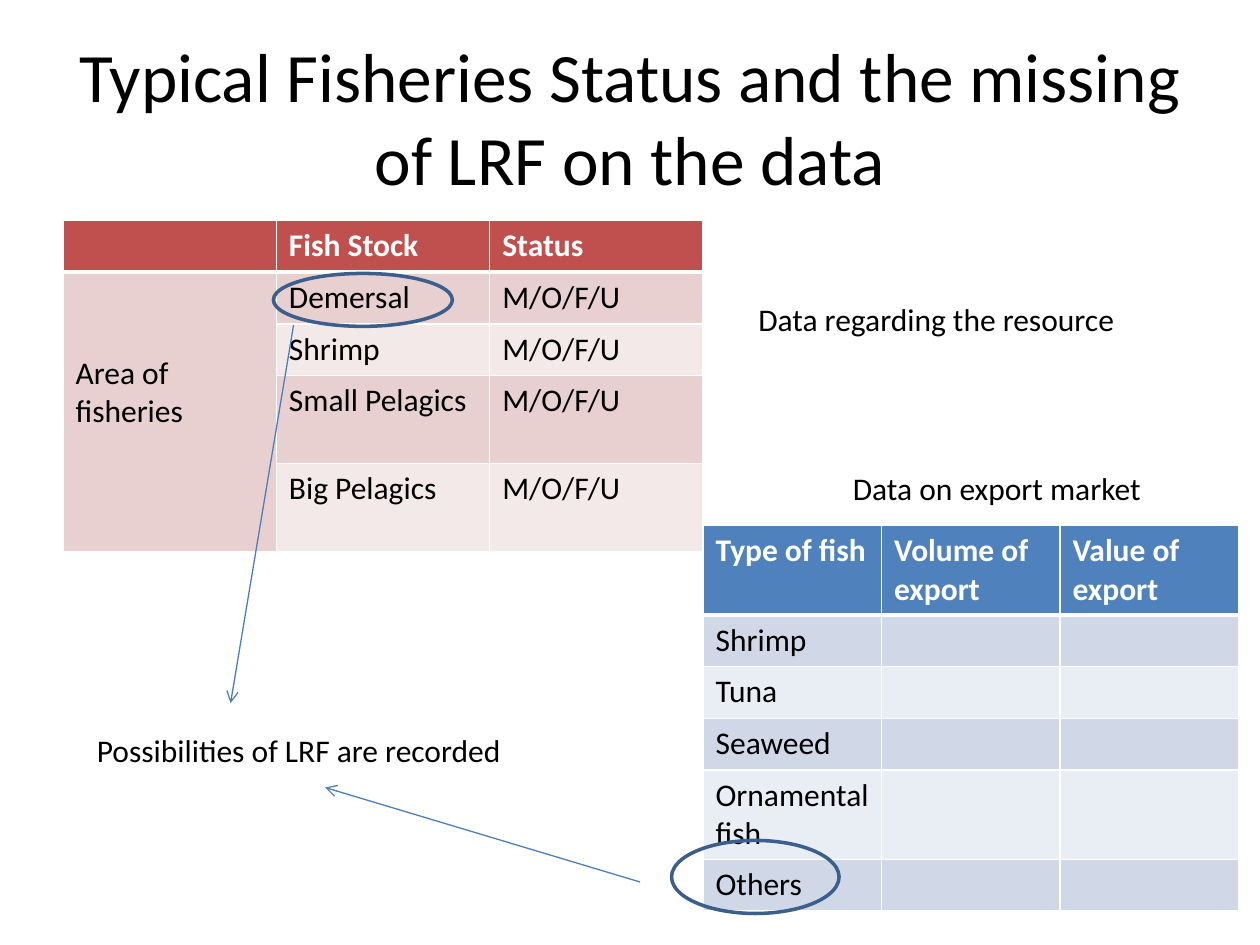
from dataclasses import dataclass

from lxml import etree
from pptx import Presentation
from pptx.dml.color import RGBColor
from pptx.enum import shapes, text
from pptx.oxml import ns
from pptx.util import Inches, Pt


@dataclass(frozen=True)
class Theme:
    """Colours, font and type sizes of the slide."""
    font: str = "Calibri"
    title_size: float = 39.6
    body_size: float = 18
    ink: str = "000000"
    paper: str = "FFFFFF"
    ring: str = "3A5F8C"
    arrow: str = "4B7EBC"
    stock: tuple[str, str, str] = ("C0504D", "E8D0D0", "F4E9E9")
    export: tuple[str, str, str] = ("4F81BD", "D0D8E8", "E9EDF4")


@dataclass(frozen=True)
class Grid:
    """A table with its header colour and two band colours."""
    left: float
    top: float
    width: float
    heights: tuple[float, ...]
    rows: tuple[tuple[str, ...], ...]
    colors: tuple[str, str, str]


@dataclass(frozen=True)
class Label:
    """A caption and its place."""
    words: str
    left: float
    top: float
    width: float


@dataclass(frozen=True)
class Ring:
    """An ellipse around a table entry."""
    left: float
    top: float
    width: float
    height: float


@dataclass(frozen=True)
class Arrow:
    """A line from one point to another, headed at its end."""
    start: tuple[float, float]
    end: tuple[float, float]


THEME = Theme()
STATUS = "M/O/F/U"
LINE, TALL = 0.41, 0.7

GRIDS = (
    Grid(0.5, 1.75, 5.08, (LINE, LINE, LINE, TALL, TALL), (
        ("", "Fish Stock", "Status"),
        ("Area of fisheries", "Demersal", STATUS),
        ("", "Shrimp", STATUS),
        ("", "Small Pelagics", STATUS),
        ("", "Big Pelagics", STATUS),
    ), THEME.stock),
    Grid(5.58, 4.17, 4.25, (TALL, LINE, LINE, LINE, TALL, LINE), (
        ("Type of fish", "Volume of export", "Value of export"),
        *((kind, "", "") for kind in
          ("Shrimp", "Tuna", "Seaweed", "Ornamental fish", "Others")),
    ), THEME.export),
)
RINGS = (Ring(2.17, 2.17, 1.42, 0.42), Ring(5.33, 6.67, 1.33, 0.58))
ARROWS = (Arrow((2.33, 2.58), (1.83, 5.58)), Arrow((5.08, 7), (2.58, 6.25)))
LABELS = (
    Label("Possibilities of LRF are recorded", 0.67, 5.75, 3.45),
    Label("Data regarding the resource", 5.92, 2.33, 3.06),
    Label("Data on export market", 6.67, 3.67, 2.51),
)


def rgb(color: str) -> RGBColor:
    """Turn a hex string into a colour."""
    return RGBColor.from_string(color)


def write(frame, words: str, size: float, color: str, bold: bool = False) -> None:
    """Set the text of a frame and format its runs."""
    frame.text = words
    for para in frame.paragraphs:
        para.font.size = Pt(size)
        for span in para.runs:
            span.font.name = THEME.font
            span.font.size = Pt(size)
            span.font.bold = bold
            span.font.color.rgb = rgb(color)


def add_border(cell, side: str, points: float) -> None:
    """Draw one side of a cell in the paper colour."""
    properties = cell._tc.get_or_add_tcPr()
    line = etree.SubElement(properties, ns.qn(f"a:ln{side}"), w=str(Pt(points)))
    fill = etree.SubElement(line, ns.qn("a:solidFill"))
    etree.SubElement(fill, ns.qn("a:srgbClr"), val=THEME.paper)


def add_grid(page, grid: Grid):
    """Add a banded table and return it."""
    columns = len(grid.rows[0])
    table = page.shapes.add_table(
        len(grid.rows), columns, Inches(grid.left), Inches(grid.top),
        Inches(grid.width), Inches(sum(grid.heights))).table
    header, *bands = grid.colors
    for column in table.columns:
        column.width = Inches(grid.width / columns)
    for index, (height, entries) in enumerate(zip(grid.heights, grid.rows)):
        table.rows[index].height = Inches(height)
        is_header = index == 0
        for position, words in enumerate(entries):
            cell = table.cell(index, position)
            for side in "LRTB":
                heavy = (index, side) in ((0, "B"), (1, "T"))
                add_border(cell, side, 3 if heavy else 1)
            cell.fill.solid()
            cell.fill.fore_color.rgb = rgb(header if is_header else bands[(index - 1) % 2])
            write(cell.text_frame, words, THEME.body_size,
                  THEME.paper if is_header else THEME.ink, is_header)
    return table


def add_ring(page, ring: Ring) -> None:
    """Add an unfilled ellipse."""
    shape = page.shapes.add_shape(
        shapes.MSO_SHAPE.OVAL, Inches(ring.left), Inches(ring.top),
        Inches(ring.width), Inches(ring.height))
    shape.shadow.inherit = False
    shape.fill.background()
    shape.line.color.rgb = rgb(THEME.ring)
    shape.line.width = Pt(2)


def add_arrow(page, arrow: Arrow) -> None:
    """Add a thin line with an open arrowhead."""
    line = page.shapes.add_connector(
        shapes.MSO_CONNECTOR.STRAIGHT, *map(Inches, arrow.start + arrow.end))
    line.line.color.rgb = rgb(THEME.arrow)
    line.line.width = Pt(0.75)
    properties = line._element.spPr
    etree.SubElement(properties.find(ns.qn("a:ln")), ns.qn("a:tailEnd"), type="arrow")
    etree.SubElement(properties, ns.qn("a:effectLst"))


def add_label(page, label: Label) -> None:
    """Add a one-line caption."""
    box = page.shapes.add_textbox(
        Inches(label.left), Inches(label.top), Inches(label.width), Inches(0.4))
    frame = box.text_frame
    write(frame, label.words, THEME.body_size, THEME.ink)
    frame.word_wrap = False
    frame.auto_size = text.MSO_AUTO_SIZE.SHAPE_TO_FIT_TEXT


def add_title(page, words: str) -> None:
    """Place and format the title."""
    title = page.shapes.title
    title.left, title.top, title.width, title.height = map(Inches, (0.5, 0.3, 9, 1.25))
    write(title.text_frame, words, THEME.title_size, THEME.ink)
    title.text_frame.auto_size = text.MSO_AUTO_SIZE.NONE
    title.text_frame.vertical_anchor = text.MSO_ANCHOR.MIDDLE
    title.text_frame.paragraphs[0].alignment = text.PP_ALIGN.CENTER


def main() -> None:
    """Build the slide and save it."""
    deck = Presentation()
    deck.slide_width, deck.slide_height = Inches(10), Inches(7.5)
    page = deck.slides.add_slide(deck.slide_layouts[5])
    add_title(page, "Typical Fisheries Status and the missing of LRF on the data")
    stock, _ = [add_grid(page, grid) for grid in GRIDS]
    area = stock.cell(1, 0)
    area.merge(stock.cell(4, 0))
    area.margin_top = Inches(0.65)
    for ring in RINGS:
        add_ring(page, ring)
    for arrow in ARROWS:
        add_arrow(page, arrow)
    for label in LABELS:
        add_label(page, label)
    deck.save("out.pptx")


if __name__ == "__main__":
    main()
